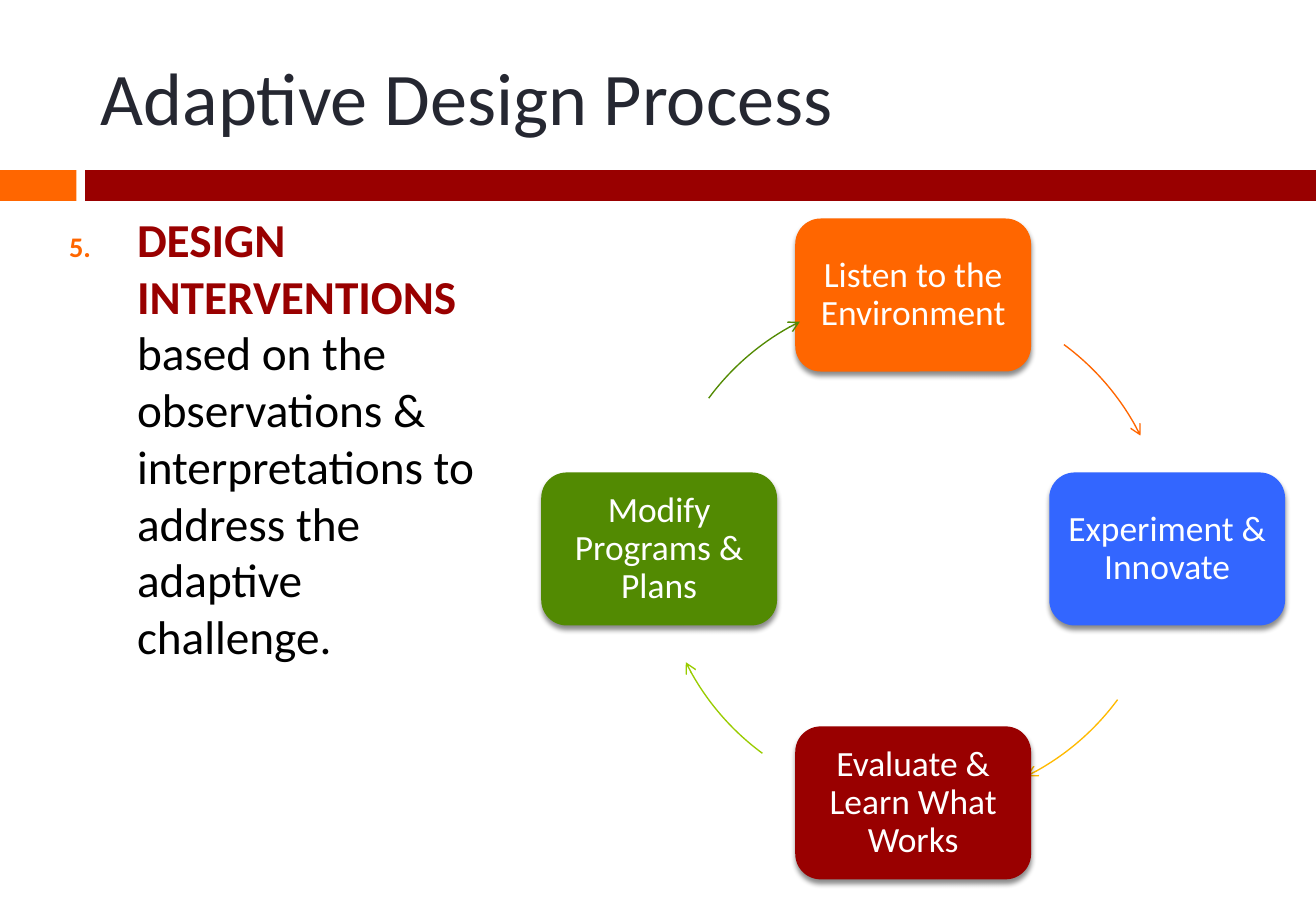
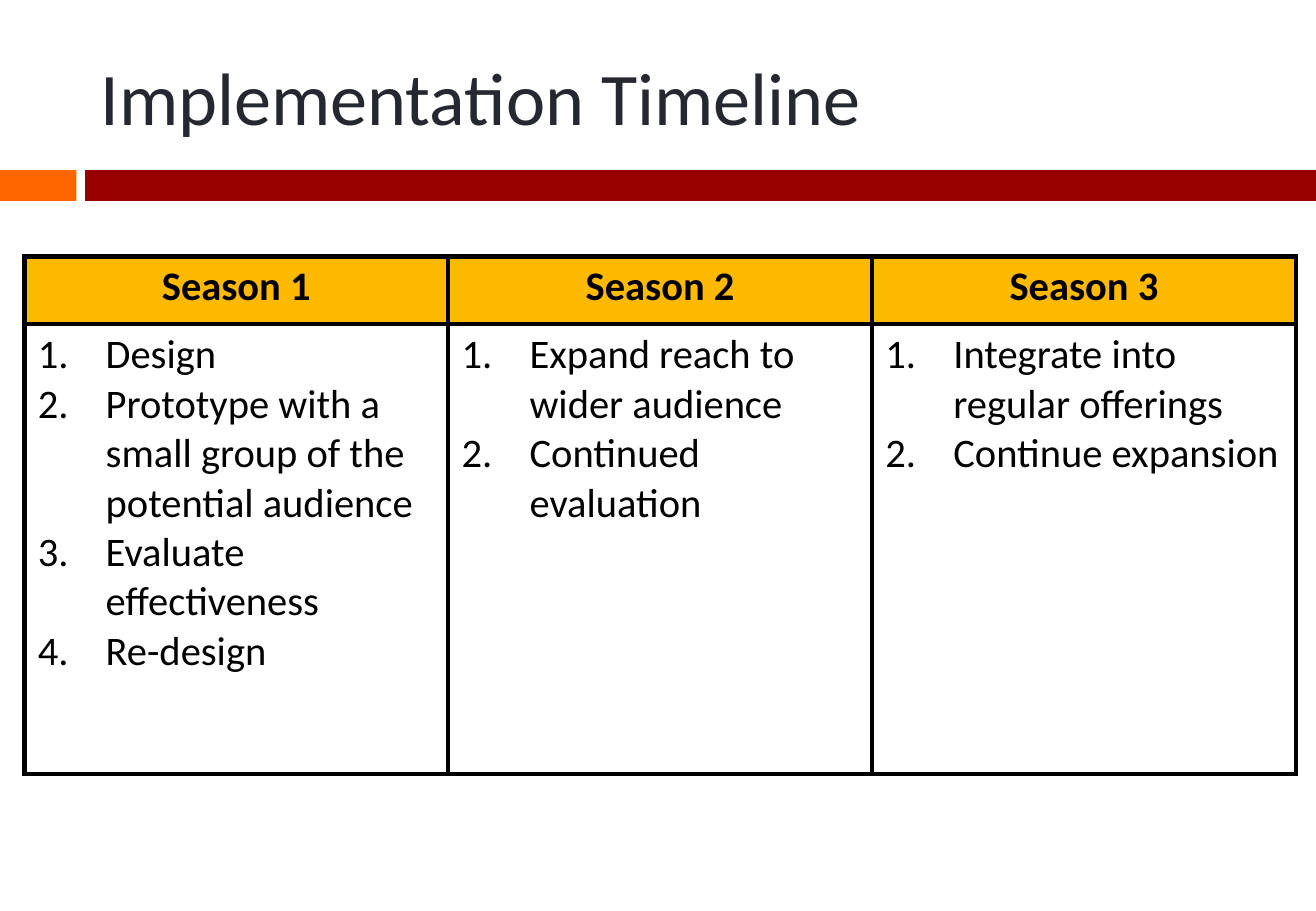
from math import cos, radians, sin

from lxml import etree
from pptx import Presentation
from pptx.dml.color import RGBColor
from pptx.enum.shapes import MSO_SHAPE
from pptx.enum.text import MSO_ANCHOR, PP_ALIGN
from pptx.oxml.ns import qn
from pptx.util import Cm, Pt

RECT, ROUNDED, ARC = MSO_SHAPE.RECTANGLE, MSO_SHAPE.ROUNDED_RECTANGLE, MSO_SHAPE.ARC
LEFT, CENTER = PP_ALIGN.LEFT, PP_ALIGN.CENTER
TOP, MIDDLE = MSO_ANCHOR.TOP, MSO_ANCHOR.MIDDLE

FONT = "Calibri"
ORANGE = RGBColor(0xFF, 0x66, 0x00)
RED = RGBColor(0x99, 0x00, 0x00)
BLUE = RGBColor(0x33, 0x66, 0xFF)
AMBER = RGBColor(0xFF, 0xBA, 0x00)
LIME = RGBColor(0x99, 0xCC, 0x00)
GREEN = RGBColor(0x52, 0x8A, 0x02)
INK = RGBColor(0x25, 0x27, 0x31)
BLACK = RGBColor(0, 0, 0)
WHITE = RGBColor(0xFF, 0xFF, 0xFF)

SLIDE_WIDTH, SLIDE_HEIGHT = 27.51, 19.05
BAND_TOP, BAND_HEIGHT = 3.56, 0.64
BANDS = [(0, 1.6, ORANGE), (1.78, SLIDE_WIDTH - 1.78, RED)]
TITLE_BOX = (1.85, 0.64, 24.54, 2.74)
NUMBER_INDENT = 1.42

STEP_NUMBER = 5
STEP_BOX = (1.19, 4.27, 9.63, 13.54)
STEP_TEXT = [
    ("DESIGN INTERVENTIONS ", RED, True),
    ("based on the observations & interpretations to address the adaptive challenge.",
     BLACK, False),
]

CYCLE = [
    ("Listen to the Environment", ORANGE, ORANGE),
    ("Experiment & Innovate", BLUE, AMBER),
    ("Evaluate & Learn What Works", RED, LIME),
    ("Modify Programs & Plans", GREEN, GREEN),
]
CYCLE_X, CYCLE_Y, CYCLE_RADIUS = 19.09, 11.48, 5.31
STAGE_WIDTH, STAGE_HEIGHT, STAGE_INSET = 4.93, 3.2, 0.23
ARC_START, ARC_END = 36.4, 63.5

SEASONS = {
    "Season 1": ["Design", "Prototype with a small group of the potential audience",
                 "Evaluate effectiveness", "Re-design"],
    "Season 2": ["Expand reach to wider audience", "Continued evaluation"],
    "Season 3": ["Integrate into regular offerings", "Continue expansion"],
}
TIMELINE_LEFT, TIMELINE_TOP = 0.51, 5.36
SEASON_WIDTH, ROW_HEIGHTS = 8.86, (1.42, 9.4)


def add_xml(parent, tag, **attributes):
    child = etree.SubElement(parent, qn(tag))
    for name, value in attributes.items():
        child.set(name, str(value))
    return child


def style(run, size, color, bold=False):
    run.font.name = FONT
    run.font.size = Pt(size)
    run.font.color.rgb = color
    run.font.bold = bold


def place(shape, box):
    shape.left, shape.top, shape.width, shape.height = (Cm(length) for length in box)


def number(paragraph, start=1, color=None, percent=100):
    properties = paragraph._p.get_or_add_pPr()
    properties.set("marL", str(Cm(NUMBER_INDENT)))
    properties.set("indent", str(-Cm(NUMBER_INDENT)))
    if color is not None:
        add_xml(add_xml(properties, "a:buClr"), "a:srgbClr", val=color)
    add_xml(properties, "a:buSzPct", val=percent * 1000)
    add_xml(properties, "a:buFont", typeface="+mj-lt")
    add_xml(properties, "a:buAutoNum", type="arabicPeriod", startAt=start)


def add_figure(slide, kind, box, fill=None):
    figure = slide.shapes.add_shape(kind, *(Cm(length) for length in box))
    figure.shadow.inherit = False
    if fill is None:
        figure.fill.background()
    else:
        figure.fill.solid()
        figure.fill.fore_color.rgb = fill
        figure.line.fill.background()
    return figure


def add_master_bands(prs, slide):
    for left, width, color in BANDS:
        band = add_figure(slide, RECT, (left, BAND_TOP, width, BAND_HEIGHT), color)
        prs.slide_master.shapes._spTree.append(band._element)


def add_titled_slide(prs, layout, heading):
    slide = prs.slides.add_slide(prs.slide_layouts[layout])
    title = slide.shapes.title
    place(title, TITLE_BOX)
    title.text_frame.text = heading
    title.text_frame.vertical_anchor = MIDDLE
    paragraph = title.text_frame.paragraphs[0]
    paragraph.alignment = LEFT
    style(paragraph.runs[0], 44, INK)
    return slide


def add_step(slide):
    body = slide.placeholders[1]
    place(body, STEP_BOX)
    body.text_frame.vertical_anchor = TOP
    paragraph = body.text_frame.paragraphs[0]
    paragraph.space_before = Pt(7)
    for words, color, bold in STEP_TEXT:
        run = paragraph.add_run()
        run.text = words
        style(run, 28, color, bold)
    number(paragraph, STEP_NUMBER, ORANGE, 60)


def add_stage(slide, label, color, angle):
    x = CYCLE_X + CYCLE_RADIUS * cos(radians(angle))
    y = CYCLE_Y + CYCLE_RADIUS * sin(radians(angle))
    box = (x - STAGE_WIDTH / 2, y - STAGE_HEIGHT / 2, STAGE_WIDTH, STAGE_HEIGHT)
    stage = add_figure(slide, ROUNDED, box, color)
    effects = stage._element.spPr.find(qn("a:effectLst"))
    shadow = add_xml(effects, "a:outerShdw", blurRad=Pt(3), dist=Pt(2.4),
                     dir=90 * 60000, rotWithShape=0)
    add_xml(add_xml(shadow, "a:srgbClr", val=BLACK), "a:alpha", val=45000)
    frame = stage.text_frame
    frame.margin_left = frame.margin_right = Cm(STAGE_INSET)
    frame.margin_top = frame.margin_bottom = Cm(STAGE_INSET)
    frame.word_wrap = True
    frame.vertical_anchor = MIDDLE
    frame.text = label
    paragraph = frame.paragraphs[0]
    paragraph.alignment = CENTER
    paragraph.line_spacing = 0.9
    style(paragraph.runs[0], 21, WHITE)


def add_cycle_arrow(slide, color, angle):
    box = (CYCLE_X - CYCLE_RADIUS, CYCLE_Y - CYCLE_RADIUS,
           2 * CYCLE_RADIUS, 2 * CYCLE_RADIUS)
    arrow = add_figure(slide, ARC, box)
    for index, offset in enumerate((ARC_START, ARC_END)):
        arrow.adjustments[index] = (angle + offset) % 360 * 0.6
    arrow.line.color.rgb = color
    arrow.line.width = Pt(0.79)
    add_xml(arrow.line._get_or_add_ln(), "a:tailEnd", type="arrow")


def add_cycle(slide):
    for index, (label, stage_color, arrow_color) in enumerate(CYCLE):
        angle = index * 360 / len(CYCLE) - 90
        add_stage(slide, label, stage_color, angle)
        add_cycle_arrow(slide, arrow_color, angle)


def fill_cell(cell, text, color, bold):
    properties = cell._tc.get_or_add_tcPr()
    for side in ("a:lnL", "a:lnR", "a:lnT", "a:lnB"):
        border = add_xml(properties, side, w=Pt(3))
        add_xml(add_xml(border, "a:solidFill"), "a:srgbClr", val=BLACK)
    cell.fill.solid()
    cell.fill.fore_color.rgb = color
    cell.margin_left = cell.margin_right = Cm(0.28)
    cell.margin_top = cell.margin_bottom = Cm(0.13)
    cell.text_frame.text = text
    for paragraph in cell.text_frame.paragraphs:
        style(paragraph.runs[0], 24, BLACK, bold)


def add_timeline(slide):
    timeline = slide.shapes.add_table(
        len(ROW_HEIGHTS), len(SEASONS), Cm(TIMELINE_LEFT), Cm(TIMELINE_TOP),
        Cm(SEASON_WIDTH * len(SEASONS)), Cm(sum(ROW_HEIGHTS))).table
    timeline.horz_banding = False
    for row, height in zip(timeline.rows, ROW_HEIGHTS):
        row.height = Cm(height)
    for column, (season, tasks) in enumerate(SEASONS.items()):
        timeline.columns[column].width = Cm(SEASON_WIDTH)
        header, task_list = timeline.cell(0, column), timeline.cell(1, column)
        fill_cell(header, season, AMBER, True)
        header.text_frame.paragraphs[0].alignment = CENTER
        fill_cell(task_list, "\n".join(tasks), WHITE, False)
        for paragraph in task_list.text_frame.paragraphs:
            number(paragraph)


def main():
    prs = Presentation()
    prs.slide_width, prs.slide_height = Cm(SLIDE_WIDTH), Cm(SLIDE_HEIGHT)

    process = add_titled_slide(prs, 1, "Adaptive Design Process")
    add_master_bands(prs, process)
    add_step(process)
    add_cycle(process)

    implementation = add_titled_slide(prs, 5, "Implementation Timeline")
    add_timeline(implementation)

    prs.save("out.pptx")


if __name__ == "__main__":
    main()
